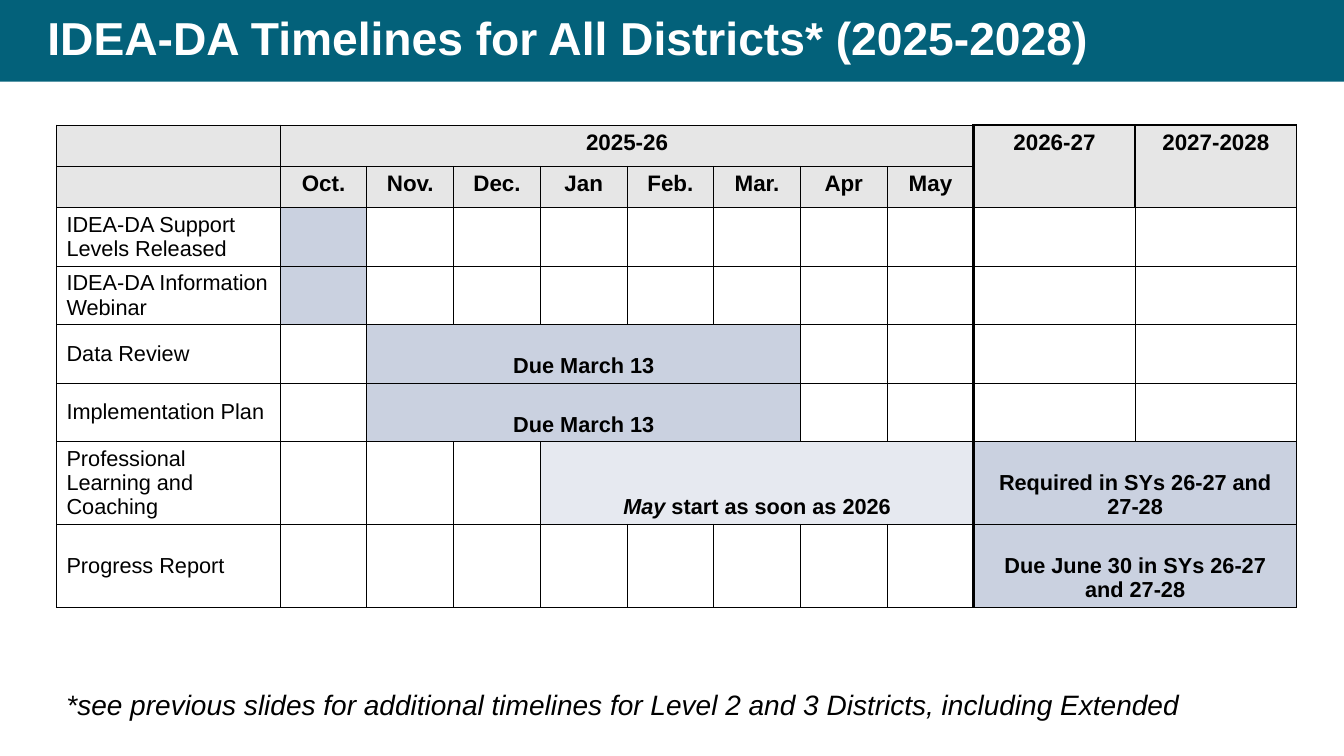
from lxml.etree import SubElement
from pptx import Presentation
from pptx.dml.color import RGBColor
from pptx.enum.shapes import MSO_SHAPE
from pptx.enum.text import MSO_ANCHOR as Anchor, PP_ALIGN as Align
from pptx.oxml.ns import qn
from pptx.util import Inches, Pt

TEAL = RGBColor(0x03, 0x61, 0x7A)
WHITE = RGBColor(0xFF, 0xFF, 0xFF)
BLACK = RGBColor(0, 0, 0)
GRAY = RGBColor(0xE6, 0xE6, 0xE6)
BLUE = RGBColor(0xCA, 0xD1, 0xE0)
PALE_BLUE = RGBColor(0xE6, 0xE9, 0xF0)
FONT = "Arial"

TITLE = "IDEA-DA Timelines for All Districts* (2025-2028)"
FOOTNOTE = ("*see previous slides for additional timelines for Level 2 and 3 "
            "Districts, including Extended")
MONTHS = ["Oct.", "Nov.", "Dec.", "Jan", "Feb.", "Mar.", "Apr", "May"]
# (row, column, rows spanned, columns spanned, text)
YEARS = [(0, 1, 1, 8, "2025-26"), (0, 9, 2, 1, "2026-27"), (0, 10, 2, 1, "2027-2028")]
ACTIVITIES = ["IDEA-DA Support Levels Released", "IDEA-DA Information Webinar",
              "Data Review", "Implementation Plan",
              "Professional Learning and Coaching", "Progress Report"]
# (row, column, columns spanned, fill, [(text, italic)])
BARS = [
    (2, 1, 1, BLUE, []),
    (3, 1, 1, BLUE, []),
    (4, 2, 5, BLUE, [("Due March 13", False)]),
    (5, 2, 5, BLUE, [("Due March 13", False)]),
    (6, 4, 5, PALE_BLUE, [("May", True), (" start as soon as 2026", False)]),
    (6, 9, 2, BLUE, [("Required in SYs 26-27 and 27-28", False)]),
    (7, 9, 2, BLUE, [("Due June 30 in SYs 26-27 and 27-28", False)]),
]

COLUMN_WIDTHS = [2.22] + [0.86] * 8 + [1.6] * 2
ROW_HEIGHTS = [0.41] * 2 + [0.58] * 4 + [0.82] * 2
HEADER_ROWS = 2
FIRST_LATER_YEAR = 9
LEFT, TOP, WIDTH = 0.56, 1.24, 12.32


def add_run(para, text, size, color=BLACK, bold=False, italic=False):
    span = para.add_run()
    span.text = text
    font = span.font
    font.name, font.size, font.bold, font.italic = FONT, Pt(size), bold, italic
    font.color.rgb = color


def set_borders(cell, row, first, last):
    """Rule a cell covering columns first to last; later years get heavier lines."""
    later_header = row < HEADER_ROWS and first >= FIRST_LATER_YEAR
    frame = 1.5 if later_header else 0.75
    left = 2.25 if first == FIRST_LATER_YEAR else frame
    right = 2.25 if last == FIRST_LATER_YEAR - 1 else frame
    top = frame if row == 0 else 0.75
    properties = cell._tc.get_or_add_tcPr()
    for tag, width in (("lnL", left), ("lnR", right), ("lnT", top), ("lnB", 0.75)):
        line = SubElement(properties, qn(f"a:{tag}"), w=str(Pt(width)))
        fill = SubElement(line, qn("a:solidFill"))
        SubElement(fill, qn("a:srgbClr"), val=str(BLACK))


def fill_cell(cell, color):
    cell.fill.solid()
    cell.fill.fore_color.rgb = color


def write_cell(cell, runs, size, bold, align, anchor):
    cell.vertical_anchor = anchor
    para = cell.text_frame.paragraphs[0]
    para.alignment = align
    for text, italic in runs:
        add_run(para, text, size, bold=bold, italic=italic)


def add_title(page):
    title = page.shapes.title
    title.left, title.top = Inches(0.37), Inches(0)
    title.width, title.height = Inches(WIDTH), Inches(0.81)
    title.text_frame.vertical_anchor = Anchor.MIDDLE
    para = title.text_frame.paragraphs[0]
    para.alignment, para.line_spacing = Align.LEFT, 0.9
    add_run(para, TITLE, 33, WHITE, bold=True)

    band = page.shapes.add_shape(MSO_SHAPE.RECTANGLE, 0, 0, Inches(13.33), Inches(0.81))
    band.shadow.inherit = False
    band.fill.solid()
    band.fill.fore_color.rgb = TEAL
    band.line.fill.background()
    title.element.addprevious(band.element)


def add_timeline(page):
    frame = page.shapes.add_table(len(ROW_HEIGHTS), len(COLUMN_WIDTHS), Inches(LEFT),
                                  Inches(TOP), Inches(WIDTH), Inches(sum(ROW_HEIGHTS)))
    table = frame.table
    for column, width in zip(table.columns, COLUMN_WIDTHS):
        column.width = Inches(width)
    for row, height in zip(table.rows, ROW_HEIGHTS):
        row.height = Inches(height)

    last_columns = {(row, column): column + span - 1 for row, column, span, *_ in BARS}
    last_columns.update({(row, column): column + span - 1
                         for row, column, _, span, _ in YEARS})
    last_columns = {key: value for key, value in last_columns.items()}
    for row in range(len(ROW_HEIGHTS)):
        for column in range(len(COLUMN_WIDTHS)):
            cell = table.cell(row, column)
            set_borders(cell, row, column, last_columns.get((row, column), column))
            fill_cell(cell, GRAY if row < HEADER_ROWS else WHITE)

    months = [(1, column, 1, 1, name) for column, name in enumerate(MONTHS, 1)]
    for row, column, rows, columns, text in YEARS + months:
        cell = table.cell(row, column)
        if rows * columns > 1:
            cell.merge(table.cell(row + rows - 1, column + columns - 1))
        write_cell(cell, [(text, False)], 16, True, Align.CENTER, Anchor.TOP)

    for row, name in enumerate(ACTIVITIES, HEADER_ROWS):
        write_cell(table.cell(row, 0), [(name, False)], 15.5, False, Align.LEFT, Anchor.MIDDLE)

    for row, column, columns, color, runs in BARS:
        cell = table.cell(row, column)
        if columns > 1:
            cell.merge(table.cell(row, column + columns - 1))
        fill_cell(cell, color)
        write_cell(cell, runs, 15.5, True, Align.CENTER, Anchor.BOTTOM)


def add_footnote(page):
    box = page.shapes.add_textbox(Inches(LEFT), Inches(6.72), Inches(WIDTH), Inches(0.54))
    text = box.text_frame
    text.word_wrap = True
    text.margin_top = text.margin_bottom = Inches(0.1)
    add_run(text.paragraphs[0], FOOTNOTE, 20, italic=True)


def main():
    deck = Presentation()
    deck.slide_width, deck.slide_height = Inches(13.33), Inches(7.5)
    page = deck.slides.add_slide(deck.slide_layouts[5])
    add_title(page)
    add_timeline(page)
    add_footnote(page)
    deck.save("out.pptx")


if __name__ == "__main__":
    main()
